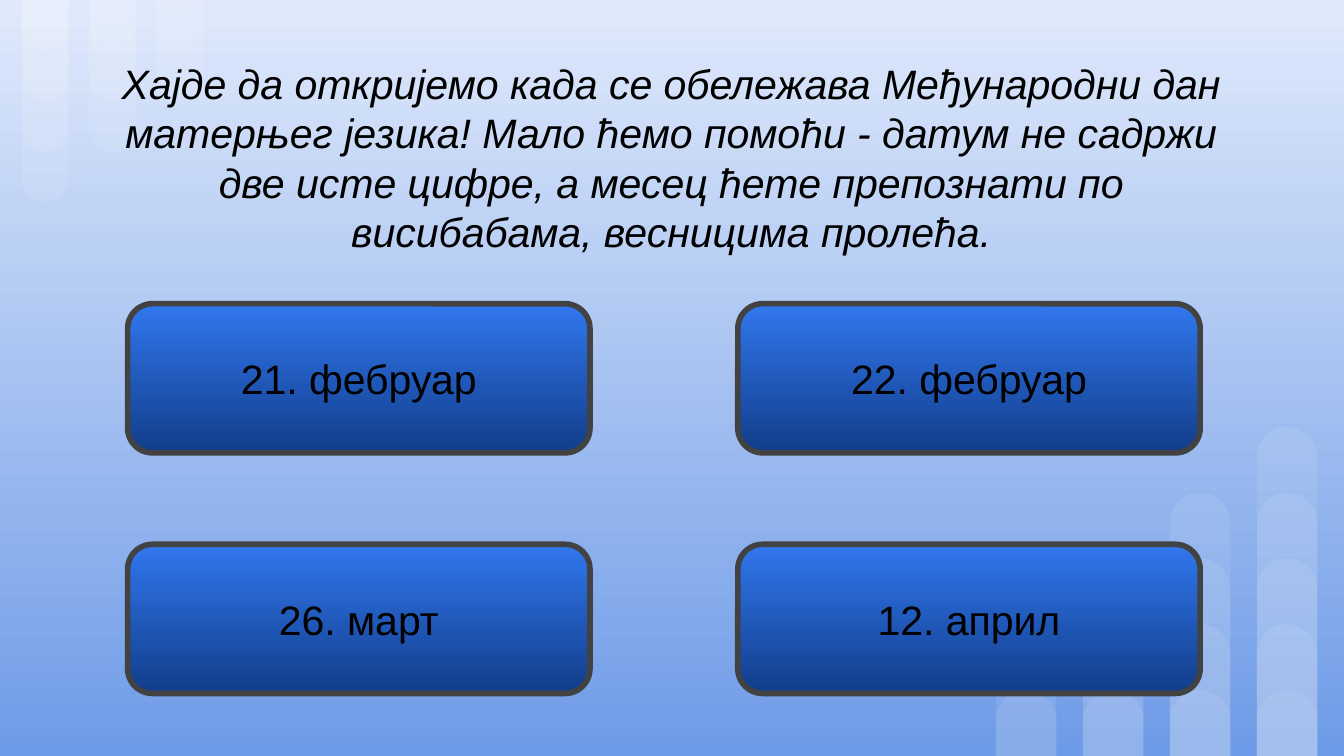
from dataclasses import dataclass

from lxml.etree import SubElement
from pptx import Presentation
from pptx.dml.color import RGBColor
from pptx.enum.shapes import MSO_SHAPE as Shape
from pptx.enum.text import MSO_ANCHOR as Anchor, PP_ALIGN as Align
from pptx.oxml.ns import qn
from pptx.util import Inches, Pt


@dataclass(frozen=True)
class Theme:
    font: str = "Arial"
    text_size: int = 22
    text: str = "000000"
    background: tuple = ("DFE9FB", "6E9BE7")
    button: tuple = ("3177EE", "113D8A")
    border: str = "424242"
    bar: str = "FFFFFF"
    bar_alpha: int = 9


theme = Theme()


def fill_downwards(fill, colors):
    """Fill with a vertical gradient from the first color to the second."""
    fill.gradient()
    fill.gradient_angle = 270
    for stop, color in zip(fill.gradient_stops, colors):
        stop.color.rgb = RGBColor.from_string(color)


def write_centered(shape, text, italic=False):
    frame = shape.text_frame
    frame.word_wrap = True
    frame.vertical_anchor = Anchor.MIDDLE
    frame.margin_left = frame.margin_right = Inches(0.1)
    frame.margin_top = frame.margin_bottom = Inches(0.1)
    paragraph = frame.paragraphs[0]
    paragraph.text = text
    paragraph.alignment = Align.CENTER
    paragraph.font.name = theme.font
    paragraph.font.size = Pt(theme.text_size)
    paragraph.font.italic = italic
    paragraph.font.color.rgb = RGBColor.from_string(theme.text)


SLIDE_HEIGHT = 5.625
presentation = Presentation()
presentation.slide_width = Inches(10)
presentation.slide_height = Inches(SLIDE_HEIGHT)
slide = presentation.slides.add_slide(presentation.slide_layouts[6])
fill_downwards(slide.background.fill, theme.background)

# Overlapping translucent bars: (left, top, width, height, rotation)
bars = []
for column, count in enumerate((4, 3, 2)):
    for level in range(1, count + 1):
        bars.append((0.16 + 0.5 * column, 0, 0.35, 0.377 * level, 180))
for column, count in enumerate((2, 3, 4, 5)):
    for level in range(1, count + 1):
        height = 0.49 * level
        bars.append((7.41 + 0.647 * column, SLIDE_HEIGHT - height, 0.45, height, 0))

for *box, rotation in bars:
    bar = slide.shapes.add_shape(Shape.ROUND_2_SAME_RECTANGLE, *map(Inches, box))
    bar.adjustments[0] = 0.5
    bar.adjustments[1] = 0
    bar.rotation = rotation
    bar.shadow.inherit = False
    bar.line.fill.background()
    bar.fill.solid()
    bar.fill.fore_color.rgb = RGBColor.from_string(theme.bar)
    color = bar.element.spPr.find(f"{qn('a:solidFill')}/{qn('a:srgbClr')}")
    SubElement(color, qn("a:alpha"), val=str(theme.bar_alpha * 1000))

question = slide.shapes.add_textbox(Inches(0.59), Inches(0.32), Inches(8.81), Inches(1.7))
write_centered(
    question,
    "Хајде да откријемо када се обележава Међународни дан матерњег језика! "
    "Мало ћемо помоћи - датум не садржи две исте цифре, "
    "а месец ћете препознати по висибабама, весницима пролећа.",
    italic=True,
)

answers = (("21. фебруар", "22. фебруар"), ("26. март", "12. април"))
for row, dates in enumerate(answers):
    for column, date in enumerate(dates):
        button = slide.shapes.add_shape(
            Shape.ROUNDED_RECTANGLE,
            Inches(0.95 + 4.54 * column), Inches(2.26 + 1.79 * row),
            Inches(3.44), Inches(1.11),
        )
        button.shadow.inherit = False
        fill_downwards(button.fill, theme.button)
        button.line.color.rgb = RGBColor.from_string(theme.border)
        button.line.width = Pt(3)
        write_centered(button, date)

presentation.save("out.pptx")
